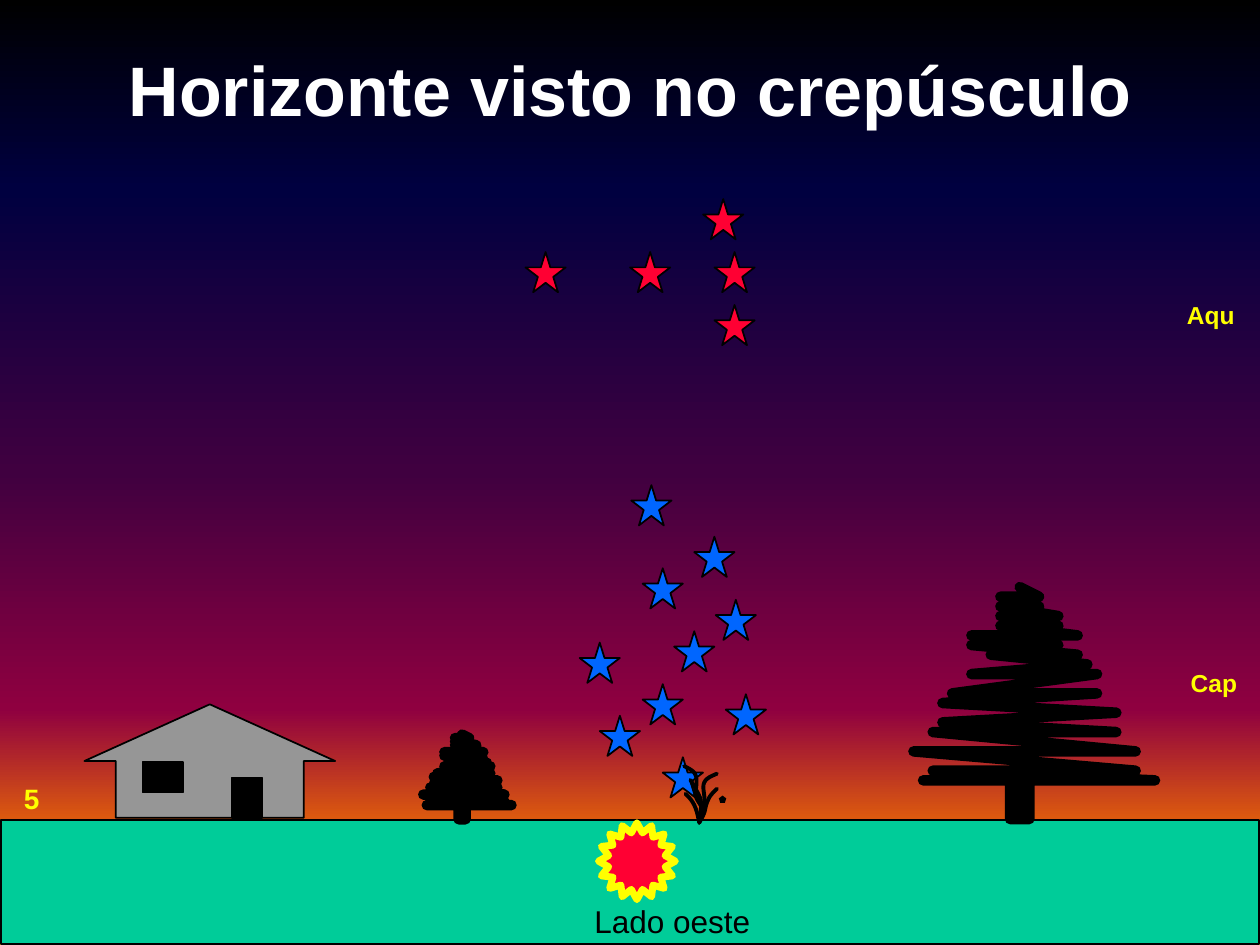
from dataclasses import dataclass

from lxml.etree import SubElement
from pptx import Presentation
from pptx.dml.color import RGBColor
from pptx.enum.shapes import MSO_SHAPE as SHAPE
from pptx.enum.text import MSO_ANCHOR as ANCHOR, MSO_AUTO_SIZE as AUTO, PP_ALIGN as ALIGN
from pptx.oxml.ns import qn
from pptx.shapes.base import BaseShape
from pptx.slide import Slide
from pptx.text.text import TextFrame
from pptx.util import Inches, Pt


@dataclass(frozen=True)
class Theme:
    """Colours, font and type sizes of the slide."""
    font: str = "Arial"
    black: str = "000000"
    white: str = "FFFFFF"
    yellow: str = "FFFF00"
    red: str = "FF0033"
    blue: str = "0066FF"
    ground: str = "00CC99"
    wall: str = "969696"
    sky: tuple = ((0, "000000"), (20, "000040"), (50, "400040"),
                  (75, "8F0040"), (90, "F27300"), (100, "FFBF00"))
    title: int = 40
    side: int = 18
    number: int = 16
    label: int = 14
    thin: float = 1
    twig: float = 2.25
    sun: float = 4
    foliage: float = 6


T = Theme()


@dataclass(frozen=True)
class Block:
    """A filled preset shape."""
    kind: SHAPE
    left: float
    top: float
    width: float
    height: float
    fill: str
    line: str = T.black
    weight: float = T.thin
    adj: tuple = ()


@dataclass(frozen=True)
class Label:
    """A centred one-line text box."""
    text: str
    left: float
    top: float
    width: float
    height: float
    size: int
    color: str = T.yellow
    bold: bool = True


@dataclass(frozen=True)
class Tree:
    """A pine drawn on a 25 by 24 grid."""
    left: float
    top: float
    unit: float


GROUND = Block(SHAPE.RECTANGLE, 0.01, 6.51, 9.98, 0.98, T.ground)
SUN = Block(SHAPE.STAR_16_POINT, 4.75, 6.53, 0.61, 0.61, T.red, T.yellow, T.sun, (0.375,))
HOUSE = (
    Block(SHAPE.UP_ARROW, 0.67, 5.59, 1.99, 0.9, T.wall, adj=(0.75, 0.5)),
    Block(SHAPE.RECTANGLE, 1.84, 6.17, 0.24, 0.32, T.black),
    Block(SHAPE.RECTANGLE, 1.13, 6.05, 0.32, 0.24, T.black),
)
FLOWER = Block(SHAPE.STAR_5_POINT, 5.72, 6.33, 0.03, 0.03, T.yellow, weight=T.twig)
TREES = (Tree(7.25, 4.66, 0.0767), Tree(3.36, 5.83, 0.028))
PINE = ((11, 0), (13, 1), (9, 1), (13, 2), (9, 2), (15, 3), (9, 3), (15, 4), (9, 4),
        (17, 5), (6, 5), (15, 6), (6, 6), (17, 7), (8, 7), (18, 8), (6, 9), (19, 9),
        (4, 11), (19, 11), (3, 12), (21, 13), (3, 14), (21, 15), (2, 15), (23, 17),
        (0, 17), (23, 19), (2, 19), (25, 20), (1, 20), (10, 20), (10, 24), (12, 24),
        (12, 20))
STAR_SIZE = 0.32
STARS = {
    T.red: ((5.58, 1.58), (5, 2), (5.67, 2.42), (4.17, 2), (5.67, 2)),
    T.blue: ((4.76, 5.68), (5.76, 5.51), (5.26, 6.01), (5.1, 5.43), (4.6, 5.1),
             (5.68, 4.76), (5.1, 4.51), (5.51, 4.26), (5.35, 5.01), (5.01, 3.85)),
}
TWIGS = (
    ((5.44, 6.3), (5.47, 6.33), (5.49, 6.35), (5.51, 6.39),
     (5.53, 6.43), (5.54, 6.48), (5.55, 6.53)),
    ((5.48, 6.19), (5.51, 6.24), (5.54, 6.29), (5.56, 6.34),
     (5.57, 6.4), (5.56, 6.47), (5.55, 6.53)),
    ((5.69, 6.26), (5.66, 6.29), (5.63, 6.32), (5.62, 6.35), (5.6, 6.39),
     (5.6, 6.42), (5.59, 6.45), (5.58, 6.48), (5.56, 6.51), (5.55, 6.53)),
    ((5.69, 6.14), (5.65, 6.16), (5.61, 6.17), (5.59, 6.21), (5.57, 6.25),
     (5.6, 6.32), (5.59, 6.36), (5.58, 6.4), (5.57, 6.43), (5.56, 6.45)),
    ((5.43, 6.08), (5.47, 6.1), (5.51, 6.12), (5.52, 6.15), (5.54, 6.19),
     (5.52, 6.27), (5.52, 6.31), (5.53, 6.35), (5.55, 6.37), (5.56, 6.39)),
)
LABELS = (
    Label("5", 0.09, 6.15, 0.32, 0.37, T.number),
    Label("Aqu", 9.32, 2.33, 0.58, 0.33, T.label),
    Label("Cap", 9.35, 5.25, 0.57, 0.33, T.label),
    Label("Lado oeste", 4.61, 7.11, 1.45, 0.4, T.side, T.black, False),
)


def rgb(color: str) -> RGBColor:
    """Turn a hex string into a colour."""
    return RGBColor.from_string(color)


def paint_sky(s: Slide) -> None:
    """Give the slide its vertical twilight gradient."""
    fill = s.background.fill
    fill.gradient()
    fill.gradient_angle = 270
    stops = next(s._element.iter(qn("a:gsLst")))
    for old in list(stops):
        stops.remove(old)
    for pos, color in T.sky:
        gs = SubElement(stops, qn("a:gs"), pos=str(pos * 1000))
        SubElement(gs, qn("a:srgbClr"), val=color)


def write(tf: TextFrame, text: str, size: int, color: str, bold: bool) -> None:
    """Set one centred paragraph."""
    p = tf.paragraphs[0]
    p.text = text
    p.alignment = ALIGN.CENTER
    p.font.name, p.font.size, p.font.bold = T.font, Pt(size), bold
    p.font.color.rgb = rgb(color)


def add_block(shapes, b: Block) -> None:
    """Draw a preset shape."""
    sp = shapes.add_shape(b.kind, *map(Inches, (b.left, b.top, b.width, b.height)))
    for i, value in enumerate(b.adj):
        sp.adjustments[i] = value
    sp.shadow.inherit = False
    sp.fill.solid()
    sp.fill.fore_color.rgb = rgb(b.fill)
    sp.line.color.rgb = rgb(b.line)
    sp.line.width = Pt(b.weight)


def style_stroke(sp: BaseShape, weight: float) -> None:
    """Make an outline an unfilled black stroke with round joins."""
    sp.shadow.inherit = False
    sp.fill.background()
    sp.line.color.rgb = rgb(T.black)
    sp.line.width = Pt(weight)
    ln = sp.line._get_or_add_ln()
    ln.set("cap", "rnd")
    SubElement(ln, qn("a:round"))


def add_stroke(shapes, points: list, weight: float) -> None:
    """Draw an open line through points given in inches."""
    start, *rest = [(Inches(x), Inches(y)) for x, y in points]
    fb = shapes.build_freeform(*start)
    fb.add_line_segments(rest, close=False)
    style_stroke(fb.convert_to_shape(), weight)


def curve_points(nodes: tuple, steps: int = 8) -> list:
    """Sample a chain of cubic curves."""
    points = [nodes[0]]
    for i in range(0, len(nodes) - 1, 3):
        for t in (k / steps for k in range(1, steps + 1)):
            weights = ((1 - t) ** 3, 3 * t * (1 - t) ** 2, 3 * t * t * (1 - t), t ** 3)
            points.append(tuple(sum(w * n[axis] for w, n in zip(weights, nodes[i:i + 4]))
                                for axis in (0, 1)))
    return points


def add_tree(s: Slide, tree: Tree) -> None:
    """Draw a pine with its trunk as one group."""
    shapes = s.shapes.add_group_shape().shapes
    u = tree.unit
    add_stroke(shapes, [(tree.left + x * u, tree.top + y * u) for x, y in PINE], T.foliage)
    add_block(shapes, Block(SHAPE.RECTANGLE, tree.left + 10 * u, tree.top + 20 * u,
                            2 * u, 4 * u, T.black))


def add_bush(s: Slide) -> None:
    """Draw the bush and its flower as one group."""
    shapes = s.shapes.add_group_shape().shapes
    add_block(shapes, FLOWER)
    for nodes in TWIGS:
        add_stroke(shapes, curve_points(nodes), T.twig)


def add_label(s: Slide, b: Label) -> None:
    """Draw a text box."""
    tf = s.shapes.add_textbox(*map(Inches, (b.left, b.top, b.width, b.height))).text_frame
    tf.word_wrap = False
    tf.auto_size = AUTO.SHAPE_TO_FIT_TEXT
    write(tf, b.text, b.size, b.color, b.bold)


def main() -> None:
    """Build the slide and save it."""
    prs = Presentation()
    prs.slide_width, prs.slide_height = Inches(10), Inches(7.5)
    s = prs.slides.add_slide(prs.slide_layouts[5])
    paint_sky(s)
    title = s.shapes.title
    title.left, title.top, title.width, title.height = map(Inches, (0, 0.08, 10, 1.25))
    title.text_frame.vertical_anchor = ANCHOR.MIDDLE
    write(title.text_frame, "Horizonte visto no crepúsculo", T.title, T.white, True)
    for block in (GROUND, SUN, *HOUSE):
        add_block(s.shapes, block)
    for tree in TREES:
        add_tree(s, tree)
    for color, places in STARS.items():
        for x, y in places:
            add_block(s.shapes, Block(SHAPE.STAR_5_POINT, x, y, STAR_SIZE, STAR_SIZE, color))
    add_bush(s)
    for label in LABELS:
        add_label(s, label)
    prs.save("out.pptx")


if __name__ == "__main__":
    main()
